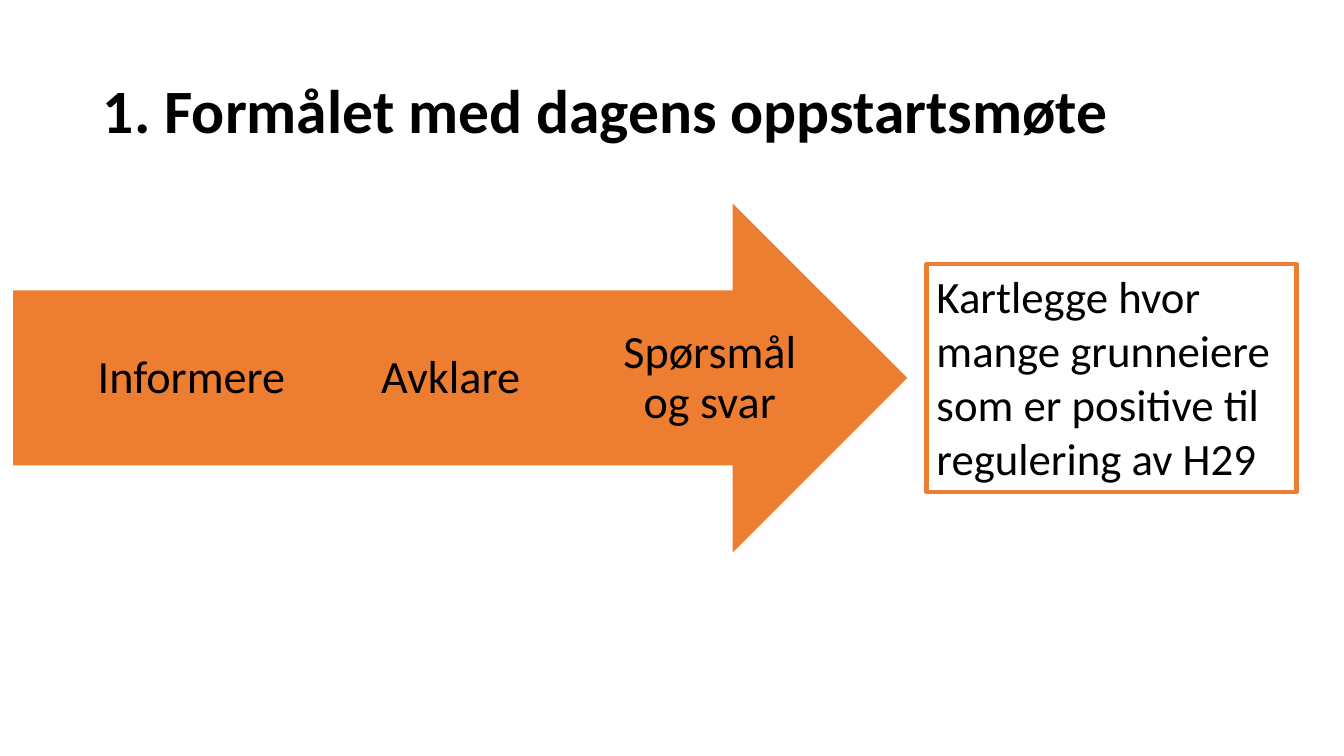
from dataclasses import dataclass

from pptx import Presentation
from pptx.dml.color import RGBColor
from pptx.enum.shapes import MSO_SHAPE
from pptx.enum.text import MSO_ANCHOR, MSO_AUTO_SIZE, PP_ALIGN
from pptx.util import Inches, Pt


@dataclass(frozen=True)
class Theme:
    font: str = "Calibri"
    text: RGBColor = RGBColor(0x00, 0x00, 0x00)
    accent: RGBColor = RGBColor(0xED, 0x7D, 0x31)
    edge: RGBColor = RGBColor(0xFF, 0xFF, 0xFF)
    title_size: int = 44
    step_size: int = 33
    goal_size: int = 32


THEME = Theme()
STEPS = ["Informere", "Avklare", "Spørsmål og svar"]


def set_text(sp, text, size, anchor, align=PP_ALIGN.LEFT, spacing=1.0, bold=False):
    tf = sp.text_frame
    tf.text = text
    tf.word_wrap = True
    tf.vertical_anchor = anchor
    p = tf.paragraphs[0]
    p.alignment = align
    p.line_spacing = spacing
    font = p.runs[0].font
    font.name = THEME.font
    font.size = Pt(size)
    font.bold = bold
    font.color.rgb = THEME.text


def set_title(s, text):
    sp = s.shapes.title
    sp.left, sp.top = Inches(0.92), Inches(0.4)
    sp.width, sp.height = Inches(11.5), Inches(1.45)
    set_text(sp, text, THEME.title_size, MSO_ANCHOR.MIDDLE, spacing=0.9, bold=True)
    sp.text_frame.auto_size = MSO_AUTO_SIZE.NONE


def add_arrow(s, left, top, width, height):
    sp = s.shapes.add_shape(MSO_SHAPE.RIGHT_ARROW, Inches(left), Inches(top),
                            Inches(width), Inches(height))
    sp.shadow.inherit = False
    sp.fill.solid()
    sp.fill.fore_color.rgb = THEME.accent
    sp.line.color.rgb = THEME.edge
    sp.line.width = Pt(1)


def add_step(s, text, left):
    sp = s.shapes.add_textbox(Inches(left), Inches(2.88), Inches(2.14), Inches(1.75))
    set_text(sp, text, THEME.step_size, MSO_ANCHOR.MIDDLE, PP_ALIGN.CENTER, 0.9)
    tf = sp.text_frame
    tf.margin_left = tf.margin_right = 0
    tf.margin_top = tf.margin_bottom = Inches(0.37)


def add_goal(s, text, left, top, width, height):
    sp = s.shapes.add_shape(MSO_SHAPE.RECTANGLE, Inches(left), Inches(top),
                            Inches(width), Inches(height))
    sp.shadow.inherit = False
    sp.fill.background()
    sp.line.color.rgb = THEME.accent
    sp.line.width = Pt(3)
    set_text(sp, text, THEME.goal_size, MSO_ANCHOR.TOP)
    sp.text_frame.auto_size = MSO_AUTO_SIZE.SHAPE_TO_FIT_TEXT


def main():
    prs = Presentation()
    prs.slide_width, prs.slide_height = Inches(13.33), Inches(7.5)
    s = prs.slides.add_slide(prs.slide_layouts[5])

    # Heading
    set_title(s, "1. Formålet med dagens oppstartsmøte")

    # Arrow with evenly spaced steps
    add_arrow(s, 0.12, 2, 8.89, 3.5)
    for i, step in enumerate(STEPS):
        add_step(s, step, 0.83 + 2.57 * i)

    # Goal of the meeting
    add_goal(s, "Kartlegge hvor mange grunneiere som er positive til regulering av H29",
             9.19, 2.62, 3.67, 2.26)

    prs.save("out.pptx")


if __name__ == "__main__":
    main()
